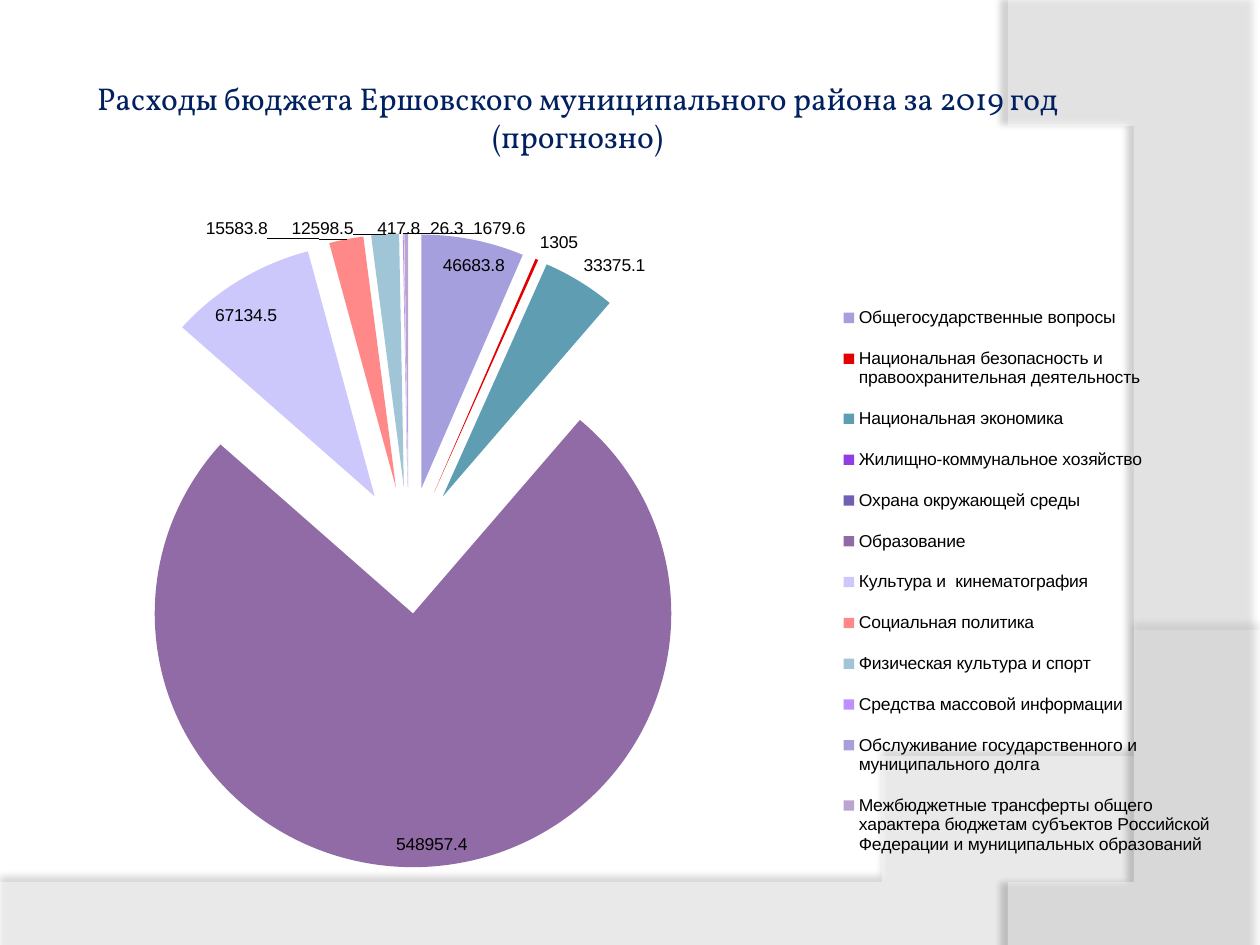
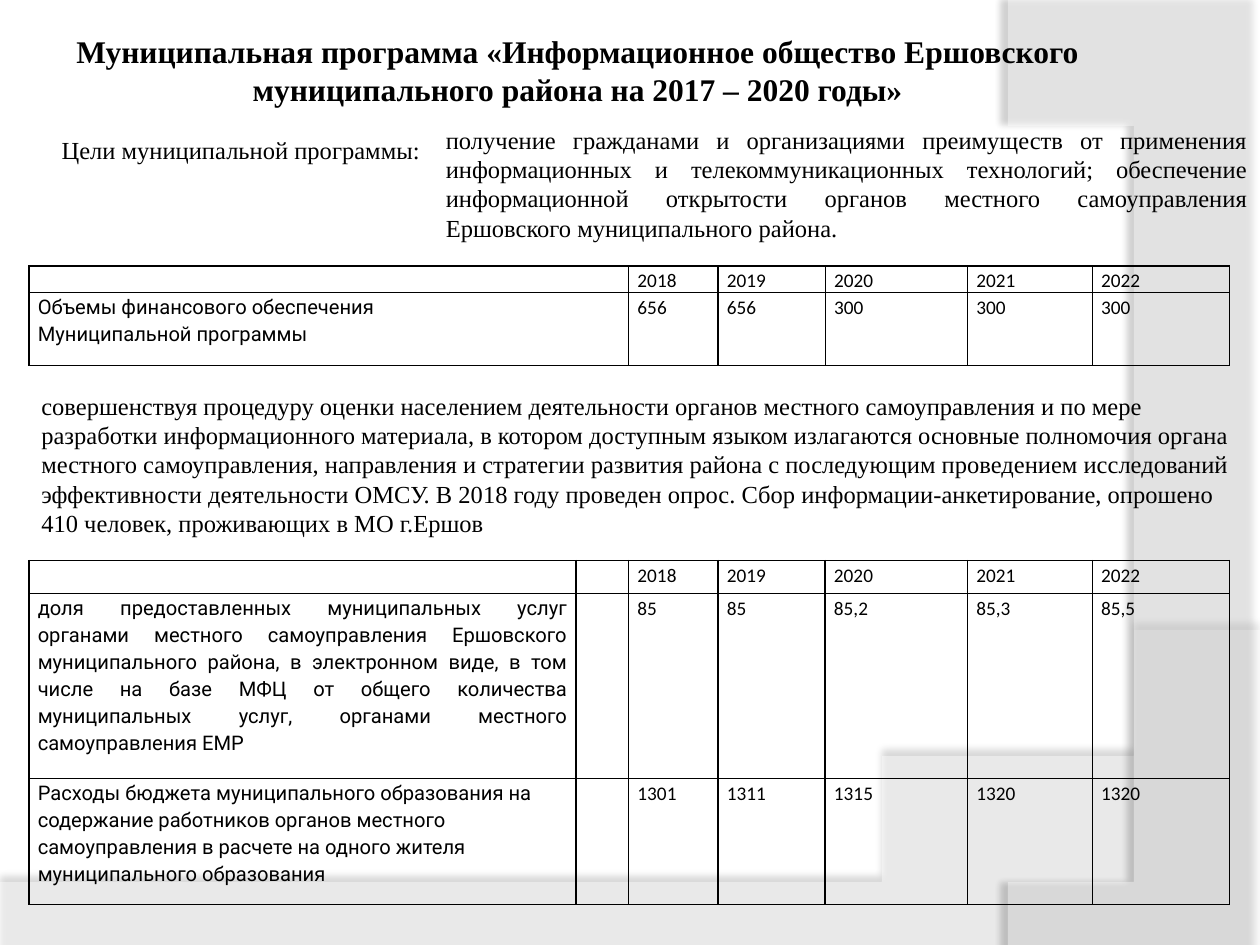
from pptx import Presentation
from pptx.chart.data import CategoryChartData
from pptx.dml.color import RGBColor
from pptx.enum.chart import XL_CHART_TYPE as ChartType, XL_LABEL_POSITION as LabelPos, XL_LEGEND_POSITION as LegendPos
from pptx.enum.text import MSO_ANCHOR as Anchor, PP_ALIGN as Align
from pptx.oxml import parse_xml
from pptx.oxml.ns import nsdecls, qn
from pptx.util import Inches, Pt

BLACK = RGBColor(0, 0, 0)
WHITE = RGBColor(0xFF, 0xFF, 0xFF)
NAVY = RGBColor(0x00, 0x20, 0x60)
SERIF = "Times New Roman"


def add_text(slide, box, text, size, font=SERIF, color=BLACK, bold=False, align=Align.LEFT):
    left, top, width, height = map(Inches, box)
    frame = slide.shapes.add_textbox(left, top, width, height).text_frame
    frame.word_wrap = True
    paragraph = frame.paragraphs[0]
    paragraph.alignment = align
    run = paragraph.add_run()
    run.text = text
    run.font.name, run.font.size, run.font.bold = font, Pt(size), bold
    run.font.color.rgb = color
    return frame


def set_layout(parent, index, x, y, w, h, target=""):
    for old in parent.findall(qn("c:layout")):
        parent.remove(old)
    parent.insert(index, parse_xml(
        f'<c:layout {nsdecls("c")}><c:manualLayout>{target}'
        '<c:xMode val="edge"/><c:yMode val="edge"/>'
        f'<c:x val="{x}"/><c:y val="{y}"/><c:w val="{w}"/><c:h val="{h}"/>'
        '</c:manualLayout></c:layout>'))


prs = Presentation()
prs.slide_width, prs.slide_height = Inches(10), Inches(7.5)
blank = prs.slide_layouts[6]
expenses, program = prs.slides.add_slide(blank), prs.slides.add_slide(blank)

# Translucent curved bands: corners, Bezier control points, opacity, shadow opacity, distance, angle
bands = [
    ([(0, 7.05), (0, 7.51), (10, 7.51), (10, 5.2)],
     [(10, 5.2), (5.59, 7.29), (3.91, 7.19), (0, 7.05)], 45, 35, 3.5, 270),
    ([(8, 0), (10, 0.02), (10, 7.5), (8.21, 7.5)],
     [(8.21, 7.5), (9.35, 6.19), (10.18, 3), (8, 0)], 40, 45, 4, 180),
]
STEPS = 40
for slide in (expenses, program):
    for corners, controls, opacity, shade, distance, angle in bands:
        curve = []
        for step in range(1, STEPS + 1):
            t = step / STEPS
            weights = ((1 - t) ** 3, 3 * t * (1 - t) ** 2, 3 * t * t * (1 - t), t ** 3)
            curve.append(tuple(sum(w * point[axis] for w, point in zip(weights, controls))
                               for axis in (0, 1)))
        builder = slide.shapes.build_freeform(*corners[0], scale=Inches(1))
        builder.add_line_segments(corners[1:] + curve, close=True)
        band = builder.convert_to_shape()
        band.line.fill.background()
        band.fill.solid()
        band.fill.fore_color.rgb = WHITE
        properties = band._element.spPr
        properties.find(qn("a:solidFill"))[0].append(
            parse_xml(f'<a:alpha {nsdecls("a")} val="{opacity * 1000}"/>'))
        properties.append(parse_xml(
            f'<a:effectLst {nsdecls("a")}><a:outerShdw blurRad="{Pt(4)}" dist="{Pt(distance)}" '
            f'dir="{angle * 60000}" algn="ctr" rotWithShape="0"><a:srgbClr val="000000">'
            f'<a:alpha val="{shade * 1000}"/></a:srgbClr></a:outerShdw></a:effectLst>'))

# Titles
titles = [
    (expenses, 1.25, "Расходы бюджета Ершовского муниципального района за 2019 год (прогнозно)",
     "Vollkorn", NAVY, False, 0.05),
    (program, 0.79, "Муниципальная программа «Информационное общество Ершовского "
     "муниципального района на 2017 – 2020 годы»", SERIF, BLACK, True, 0.33),
]
for slide, height, text, font, color, bold, bottom in titles:
    title = add_text(slide, (0.5, 0.3, 8.17, height), text, 18, font, color, bold, Align.CENTER)
    title.vertical_anchor = Anchor.MIDDLE
    title.margin_left = title.margin_right = title.margin_top = Inches(0.05)
    title.margin_bottom = Inches(bottom)

# Slide 1: expenses by budget section
sections = [
    ("Общегосударственные вопросы", 46683.8, "A69FDE"),
    ("Национальная безопасность и правоохранительная деятельность", 1305, "E30000"),
    ("Национальная экономика", 33375.1, "5F9DB3"),
    ("Жилищно-коммунальное хозяйство", 0, "903EE3"),
    ("Охрана окружающей среды", 0, "705FB3"),
    ("Образование", 548957.4, "916BA6"),
    ("Культура и  кинематография", 67134.5, "CDC8FC"),
    ("Социальная политика", 15583.8, "FF8888"),
    ("Физическая культура и спорт", 12598.5, "9FC5D6"),
    ("Средства массовой информации", 417.8, "BC90FF"),
    ("Обслуживание государственного и муниципального долга", 26.3, "A69FDB"),
    ("Межбюджетные трансферты общего характера бюджетам субъектов Российской Федерации "
     "и муниципальных образований", 1679.6, "BBA4CD"),
]
data = CategoryChartData()
data.categories = [name for name, _, _ in sections]
data.add_series("Series 1", [amount for _, amount, _ in sections])
pie = expenses.shapes.add_chart(ChartType.PIE, Inches(0.22), Inches(1.64),
                                Inches(9.55), Inches(5.47), data).chart
pie.has_title = False
pie.font.name, pie.font.size = "Arial", Pt(10)
pie.font.color.rgb = BLACK
pie.has_legend = True
pie.legend.position = LegendPos.RIGHT
pie.legend.include_in_layout = False
set_layout(pie._chartSpace.chart.plotArea, 0, 0, 0.021, 0.633, 0.937,
           '<c:layoutTarget val="inner"/>')
set_layout(pie.legend._element, 1, 0.67, 0.1, 0.32, 0.87)

pie.plots[0].vary_by_categories = True
amounts = pie.plots[0].series[0]
for index, (_, _, color) in enumerate(sections):
    slice_fill = amounts.points[index].format.fill
    slice_fill.solid()
    slice_fill.fore_color.rgb = RGBColor.from_string(color)
amounts._element.find(qn("c:dPt")).addprevious(
    parse_xml(f'<c:explosion {nsdecls("c")} val="25"/>'))
labels = amounts.data_labels
labels.show_value = True
labels.position = LabelPos.BEST_FIT
empty_sections = [index for index, section in enumerate(sections) if section[1] == 0]
for place, index in enumerate(empty_sections):
    labels._element.insert(place, parse_xml(
        f'<c:dLbl {nsdecls("c")}><c:idx val="{index}"/><c:delete val="1"/></c:dLbl>'))

# Slide 2: goals and survey
add_text(program, (0.39, 1.02, 7.11, 0.34), "Цели муниципальной программы:", 14)
add_text(program, (3.44, 0.94, 6.56, 1.04),
         "получение гражданами и организациями преимуществ от применения информационных и "
         "телекоммуникационных технологий; обеспечение информационной открытости органов "
         "местного самоуправления Ершовского муниципального района.", 14, align=Align.JUSTIFY)
add_text(program, (0.23, 3.05, 9.77, 1.28),
         "совершенствуя процедуру оценки населением деятельности органов местного самоуправления "
         "и по мере разработки информационного материала, в котором доступным языком излагаются "
         "основные полномочия органа местного самоуправления, направления и стратегии развития "
         "района с последующим проведением исследований эффективности деятельности ОМСУ. "
         "В 2018 году проведен опрос. Сбор информации-анкетирование, опрошено 410 человек, "
         "проживающих в МО г.Ершов", 14)

# Slide 2: funding and indicator tables
years = ["2018", "2019", "2020", "2021", "2022"]
year_widths = [0.71, 0.85, 1.13, 0.99, 1.09]
funding = [
    ["", *years],
    ["Объемы финансового обеспечения\nМуниципальной программы", "656", "656", "300", "300", "300"],
]
indicators = [
    ["", "", *years],
    ["доля предоставленных муниципальных услуг органами местного самоуправления Ершовского "
     "муниципального района, в электронном виде, в том числе на базе МФЦ от общего количества "
     "муниципальных услуг, органами местного самоуправления ЕМР",
     "", "85", "85", "85,2", "85,3", "85,5"],
    ["Расходы бюджета муниципального образования на содержание работников органов местного "
     "самоуправления в расчете на одного жителя муниципального образования",
     "", "1301", "1311", "1315", "1320", "1320"],
]
tables = [
    (2.11, [4.76, *year_widths], [0.21, 0.58], funding),
    (4.45, [4.34, 0.42, *year_widths], [0.26, 1.47, 1], indicators),
]
for top, widths, heights, rows in tables:
    table = program.shapes.add_table(len(rows), len(widths), Inches(0.23), Inches(top),
                                     Inches(sum(widths)), Inches(sum(heights))).table
    table.first_row = table.horz_banding = False
    for column, width in zip(table.columns, widths):
        column.width = Inches(width)
    for r, (row, height) in enumerate(zip(rows, heights)):
        table.rows[r].height = Inches(height)
        for c, text in enumerate(row):
            cell = table.cell(r, c)
            cell.margin_left = cell.margin_right = Inches(0.07)
            cell.margin_top = cell.margin_bottom = 0
            for side in ("lnL", "lnR", "lnT", "lnB"):
                cell._tc.get_or_add_tcPr().append(parse_xml(
                    f'<a:{side} {nsdecls("a")} w="{Pt(1)}"><a:solidFill>'
                    f'<a:srgbClr val="000000"/></a:solidFill></a:{side}>'))
            cell.fill.background()
            for n, line in enumerate(text.split("\n")):
                paragraph = cell.text_frame.paragraphs[0] if n == 0 else cell.text_frame.add_paragraph()
                paragraph.line_spacing = 1.15
                if text.startswith("доля"):
                    paragraph.alignment = Align.JUSTIFY
                if not line:
                    paragraph.font.size = Pt(11)
                    continue
                run = paragraph.add_run()
                run.text = line
                run.font.name = "Calibri" if c else "Roboto"
                run.font.size = Pt(11 if c else 11.5)
                run.font.color.rgb = BLACK

prs.save("out.pptx")
